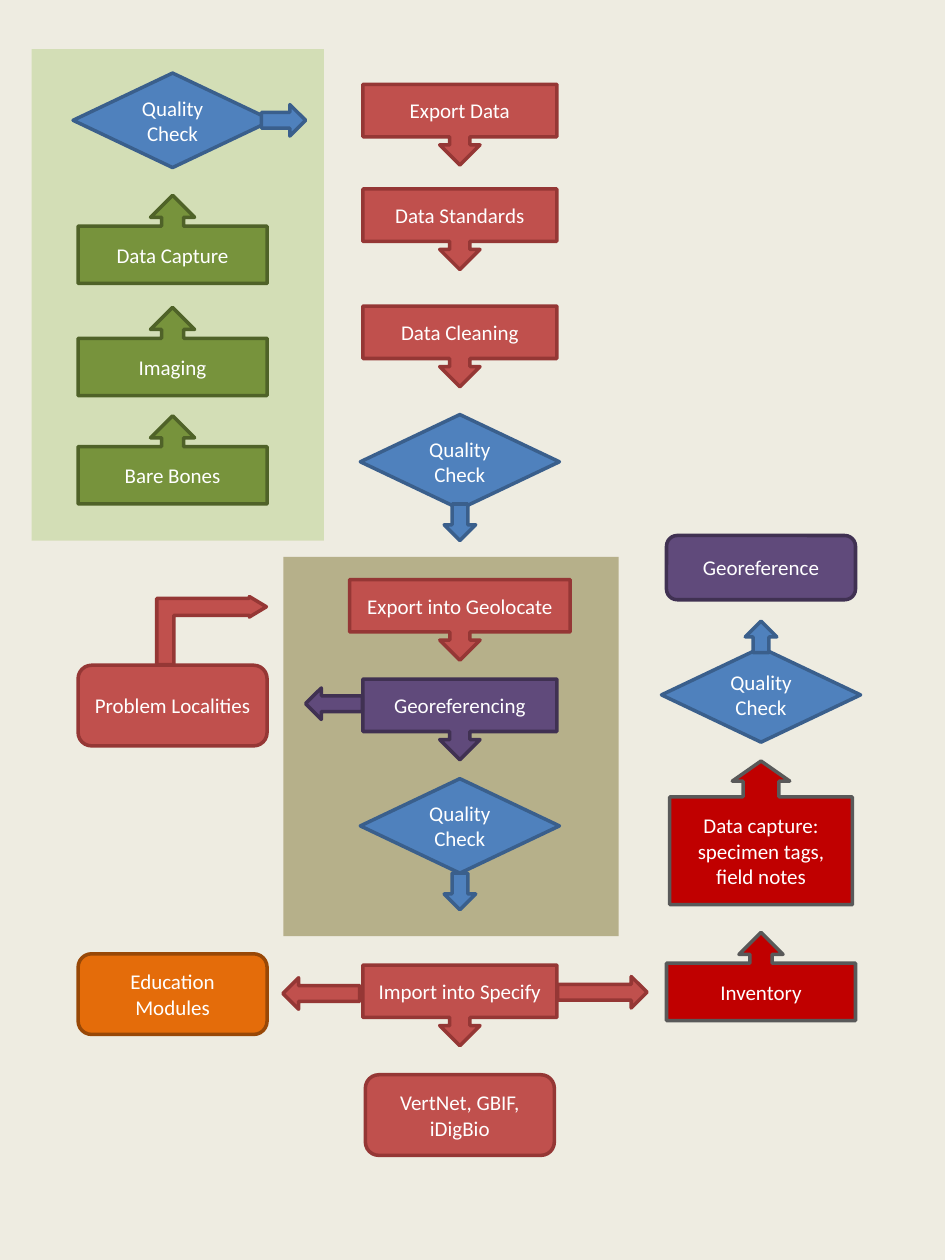
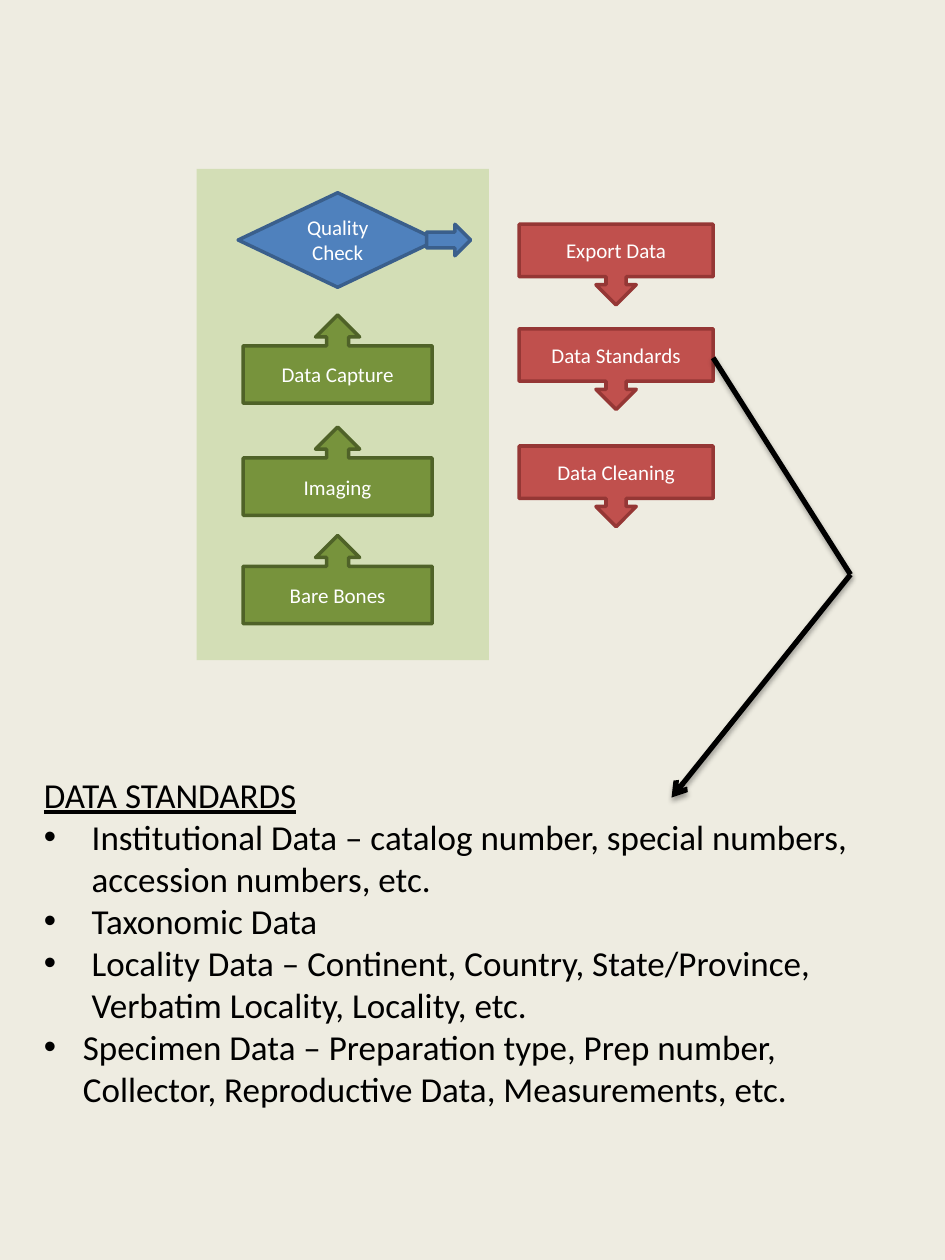
import pptx
import pptx.util
import pptx.dml.color
import pptx.enum.dml
import pptx.enum.shapes
import pptx.enum.text
import pptx.oxml
import pptx.oxml.ns

Inches = pptx.util.Inches
Pt = pptx.util.Pt
RGBColor = pptx.dml.color.RGBColor
Preset = pptx.enum.shapes.MSO_SHAPE

FONT = "Calibri"
BACKGROUND = RGBColor(0xEE, 0xEC, 0xE1)
WHITE = RGBColor(0xFF, 0xFF, 0xFF)
BLACK = RGBColor(0, 0, 0)
LIGHT_GREEN = RGBColor(0xC3, 0xD6, 0x9B)
KHAKI = RGBColor(0x94, 0x8A, 0x54)
RED = (RGBColor(0xC0, 0x50, 0x4D), RGBColor(0x95, 0x37, 0x35))
BLUE = (RGBColor(0x4F, 0x81, 0xBD), RGBColor(0x3A, 0x5F, 0x8C))
GREEN = (RGBColor(0x77, 0x93, 0x3C), RGBColor(0x4F, 0x62, 0x28))
PURPLE = (RGBColor(0x60, 0x4A, 0x7B), RGBColor(0x40, 0x31, 0x52))
ORANGE = (RGBColor(0xE4, 0x6C, 0x0A), RGBColor(0x98, 0x48, 0x07))
CRIMSON = (RGBColor(0xC0, 0, 0), RGBColor(0x59, 0x59, 0x59))
PANEL_OPACITY = 61

STEP_DOWN = (Preset.DOWN_ARROW_CALLOUT, 1.54, 0.64)
WIDE_STEP_DOWN = (Preset.DOWN_ARROW_CALLOUT, 1.75, 0.64)
STEP_UP = (Preset.UP_ARROW_CALLOUT, 1.5, 0.7)
TALL_STEP_UP = (Preset.UP_ARROW_CALLOUT, 1.45, 1.14)
CHECK = (Preset.FLOWCHART_DECISION, 1.58, 0.75)
RESULT = (Preset.FLOWCHART_ALTERNATE_PROCESS, 1.5, 0.64)
LOW_RESULT = (Preset.FLOWCHART_ALTERNATE_PROCESS, 1.5, 0.51)
ARROW_DOWN = (Preset.DOWN_ARROW, 0.25, 0.29)
ARROW_UP = (Preset.UP_ARROW, 0.25, 0.25)

LEFT, MIDDLE, RIGHT = 1.37, 3.65, 6.04

CAPTURE_PANEL = (0.25, 0.39, 2.32, 3.9)
GEOLOCATE_PANEL = (2.25, 4.42, 2.66, 3.01)

CAPTURE_STEPS = [
    (STEP_UP, LEFT, 3.3, GREEN, "Bare Bones"),
    (STEP_UP, LEFT, 2.44, GREEN, "Imaging"),
    (STEP_UP, LEFT, 1.55, GREEN, "Data Capture"),
    (CHECK, LEFT, 0.58, BLUE, "Quality Check"),
    ((Preset.RIGHT_ARROW, 0.35, 0.25), 2.25, 0.83, BLUE, ""),
]
EXPORT_STEPS = [
    (STEP_DOWN, MIDDLE, 0.67, RED, "Export Data"),
    (STEP_DOWN, MIDDLE, 1.5, RED, "Data Standards"),
    (STEP_DOWN, MIDDLE, 2.43, RED, "Data Cleaning"),
]
PUBLISHING_STEPS = [
    (CHECK, MIDDLE, 3.29, BLUE, "Quality Check"),
    (ARROW_DOWN, MIDDLE, 4, BLUE, ""),
    (WIDE_STEP_DOWN, MIDDLE, 4.6, RED, "Export into Geolocate"),
    (STEP_DOWN, MIDDLE, 5.39, PURPLE, "Georeferencing"),
    ((Preset.LEFT_ARROW, 0.45, 0.25), 2.65, 5.46, PURPLE, ""),
    (CHECK, MIDDLE, 6.18, BLUE, "Quality Check"),
    (ARROW_DOWN, MIDDLE, 6.93, BLUE, ""),
    (STEP_DOWN, MIDDLE, 7.66, RED, "Import into Specify"),
    ((Preset.LEFT_ARROW, 0.61, 0.25), 2.55, 7.76, RED, ""),
    ((Preset.RIGHT_ARROW, 0.71, 0.25), 4.78, 7.75, RED, ""),
    (RESULT, MIDDLE, 8.53, RED, "VertNet, GBIF, iDigBio"),
    (RESULT, LEFT, 5.28, RED, "Problem Localities"),
    (RESULT, LEFT, 7.57, ORANGE, "Education Modules"),
]
INVENTORY_STEPS = [
    (STEP_UP, RIGHT, 7.4, CRIMSON, "Inventory"),
    (CHECK, RIGHT, 5.14, BLUE, "Quality Check"),
    (ARROW_UP, RIGHT, 4.93, BLUE, ""),
    (LOW_RESULT, RIGHT, 4.25, PURPLE, "Georeference"),
]
SPECIMEN_STEP = (TALL_STEP_UP, RIGHT, 6.04, CRIMSON,
                 "Data capture: specimen tags, field notes")
SPECIMEN_ADJUSTMENTS = (0.25, 0.2, 0.14, 0.75)
RETURN_ARROW = ((Preset.BENT_UP_ARROW, 0.54, 0.87), 1.68, 4.57, RED, "")
RETURN_ADJUSTMENTS = (0.25, 0.15, 0.25)

CAPTURE_SHIFT = (1.31, 0.95)
EXPORT_SHIFT = (1.24, 1.11)

STANDARDS_HEADING = "DATA STANDARDS"
STANDARDS = [
    ("Institutional Data – catalog number, special numbers, accession numbers, etc.", 0.38),
    ("Taxonomic Data", 0.38),
    ("Locality Data – Continent, Country, State/Province, Verbatim Locality, Locality, etc.", 0.38),
    ("Specimen Data – Preparation type, Prep number, Collector, Reproductive Data, "
     "Measurements, etc.", 0.31),
]
POINTER = [(5.66, 2.84), (6.75, 4.56), (5.33, 6.33)]


def xml(tag, attributes="", children=""):
    return f'<a:{tag} {attributes}>{children}</a:{tag}>'


def element(tag, attributes="", children=""):
    namespace = pptx.oxml.ns.nsdecls("a")
    return pptx.oxml.parse_xml(xml(tag, f"{namespace} {attributes}", children))


def add_run(paragraph, text, size, color):
    run = paragraph.add_run()
    run.text = text
    run.font.name = FONT
    run.font.size = Pt(size)
    run.font.color.rgb = color
    return run


def add_panel(shapes, bounds, color, shift=(0, 0)):
    left, top, width, height = bounds
    panel = shapes.add_shape(Preset.FLOWCHART_PROCESS, Inches(left + shift[0]),
                             Inches(top + shift[1]), Inches(width), Inches(height))
    panel.shadow.inherit = False
    panel.fill.solid()
    panel.fill.fore_color.rgb = color
    panel.line.fill.background()
    tint = panel.element.spPr.find(".//" + pptx.oxml.ns.qn("a:srgbClr"))
    tint.append(element("alpha", f'val="{PANEL_OPACITY * 1000}"'))


def add_step(shapes, step, shift=(0, 0), adjustments=()):
    (preset, width, height), center, top, (fill, outline), label = step
    box = shapes.add_shape(preset, Inches(center - width / 2 + shift[0]),
                           Inches(top + shift[1]), Inches(width), Inches(height))
    for index, value in enumerate(adjustments):
        box.adjustments[index] = value
    box.shadow.inherit = False
    box.fill.solid()
    box.fill.fore_color.rgb = fill
    box.line.color.rgb = outline
    box.line.width = Pt(2)
    if label:
        box.text_frame.word_wrap = True
        box.text_frame.vertical_anchor = pptx.enum.text.MSO_ANCHOR.MIDDLE
        paragraph = box.text_frame.paragraphs[0]
        paragraph.alignment = pptx.enum.text.PP_ALIGN.CENTER
        add_run(paragraph, label, 12, WHITE)
    return box


def add_steps(shapes, steps, shift=(0, 0)):
    for step in steps:
        add_step(shapes, step, shift)


def add_pointer(shapes, points):
    shadow = xml("outerShdw",
                 f'blurRad="{Pt(3.1)}" dist="{Pt(1.8)}" dir="5400000" rotWithShape="0"',
                 xml("srgbClr", 'val="000000"', xml("alpha", 'val="35000"')))
    for start, end in zip(points, points[1:]):
        segment = shapes.add_connector(pptx.enum.shapes.MSO_CONNECTOR.STRAIGHT,
                                       *map(Inches, start + end))
        segment.line.color.rgb = BLACK
        segment.line.width = Pt(3)
        if end == points[-1]:
            segment.line._get_or_add_ln().append(element("tailEnd", 'type="arrow"'))
        segment.element.spPr.append(element("effectLst", children=shadow))


def add_standards(shapes):
    frame = shapes.add_textbox(Inches(0.25), Inches(6.09), Inches(7), Inches(3.13)).text_frame
    frame.word_wrap = True
    frame.auto_size = pptx.enum.text.MSO_AUTO_SIZE.SHAPE_TO_FIT_TEXT
    add_run(frame.paragraphs[0], STANDARDS_HEADING, 20, BLACK).font.underline = True
    for text, indent in STANDARDS:
        paragraph = frame.add_paragraph()
        properties = paragraph._p.get_or_add_pPr()
        properties.set("marL", str(Inches(indent)))
        properties.set("indent", str(-Inches(indent)))
        properties.append(element("buFont", 'typeface="Arial"'))
        properties.append(element("buChar", 'char="•"'))
        add_run(paragraph, text, 20, BLACK)


def build_workflow(slide):
    shapes = slide.shapes
    add_panel(shapes, CAPTURE_PANEL, LIGHT_GREEN)
    add_panel(shapes, GEOLOCATE_PANEL, KHAKI)
    for steps in (EXPORT_STEPS, PUBLISHING_STEPS, INVENTORY_STEPS, CAPTURE_STEPS):
        add_steps(shapes, steps)
    add_step(shapes, SPECIMEN_STEP, adjustments=SPECIMEN_ADJUSTMENTS)
    return_arrow = add_step(shapes, RETURN_ARROW, adjustments=RETURN_ADJUSTMENTS)
    return_arrow.rotation = 90
    return_arrow.element.spPr.find(pptx.oxml.ns.qn("a:xfrm")).set("flipH", "1")


def build_standards(slide):
    shapes = slide.shapes
    add_steps(shapes.add_group_shape().shapes, EXPORT_STEPS, EXPORT_SHIFT)
    add_panel(shapes, CAPTURE_PANEL, LIGHT_GREEN, CAPTURE_SHIFT)
    add_steps(shapes, CAPTURE_STEPS, CAPTURE_SHIFT)
    add_standards(shapes)
    add_pointer(shapes.add_group_shape().shapes, POINTER)


def main():
    deck = pptx.Presentation()
    deck.slide_width, deck.slide_height = Inches(7.5), Inches(10)
    backdrop = deck.slide_master.background.fill
    backdrop.solid()
    backdrop.fore_color.rgb = BACKGROUND
    for build in (build_workflow, build_standards):
        build(deck.slides.add_slide(deck.slide_layouts[6]))
    deck.save("out.pptx")


if __name__ == "__main__":
    main()
